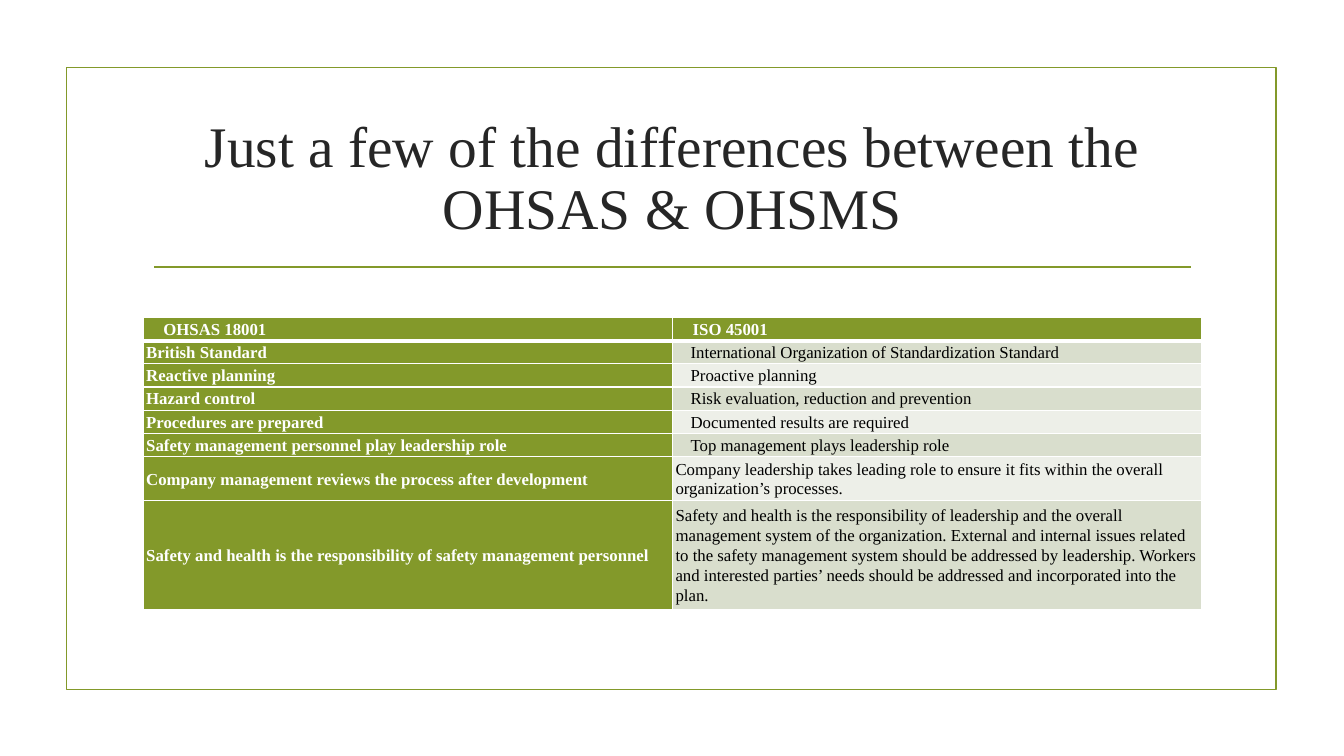
from lxml import etree
from pptx import Presentation
from pptx import util as u
from pptx.dml.color import RGBColor
from pptx.enum import shapes, text
from pptx.oxml.ns import qn

GREEN, WHITE, BLACK, INK = "83992A", "FFFFFF", "000000", "262626"
BANDS = "D9DECD", "EDEFE8"
HEADER_INDENT, ANSWER_INDENT = 17, 15
ROW_HEIGHTS = [23] * 6 + [44, 108]
COMPARISON = [
    ("OHSAS 18001", "ISO 45001"),
    ("British Standard", "International Organization of Standardization Standard"),
    ("Reactive planning", "Proactive planning"),
    ("Hazard control", "Risk evaluation, reduction and prevention"),
    ("Procedures are prepared", "Documented results are required"),
    ("Safety management personnel play leadership role",
     "Top management plays leadership role"),
    ("Company management reviews the process after development",
     "Company leadership takes leading role to ensure it fits within the overall "
     "organization’s processes."),
    ("Safety and health is the responsibility of safety management personnel",
     "Safety and health is the responsibility of leadership and the overall "
     "management system of the organization. External and internal issues related "
     "to the safety management system should be addressed by leadership. Workers "
     "and interested parties’ needs should be addressed and incorporated into the plan."),
]


def px(*lengths):
    """Turn px, 100 to the inch, into EMU."""
    return [u.Emu(length * 9144) for length in lengths]


def rgb(color):
    return RGBColor.from_string(color)


def write(frame, content, size=12, color=BLACK, bold=False, align=None,
          spacing=1.07, indent=0):
    paragraph = frame.paragraphs[0]
    paragraph.alignment = align
    paragraph.line_spacing = spacing
    if indent:
        paragraph._p.get_or_add_pPr().set("indent", str(px(indent)[0]))
    run = paragraph.add_run()
    run.text = content
    run.font.name = "Times New Roman"
    run.font.size = u.Pt(size)
    run.font.bold = bold
    run.font.color.rgb = rgb(color)


def border(cell, **widths):
    """Draw white edges; keys are the sides L, R, T, B and values points."""
    for side, width in widths.items():
        edge = etree.SubElement(cell._tc.get_or_add_tcPr(), qn(f"a:ln{side}"),
                                w=str(u.Pt(width)))
        fill = etree.SubElement(edge, qn("a:solidFill"))
        etree.SubElement(fill, qn("a:srgbClr"), val=WHITE)


class SlideBuilder:
    def __init__(self, deck, accent=GREEN):
        self.slide = deck.slides.add_slide(deck.slide_layouts[5])
        self.accent = accent

    def outline(self, shape):
        shape.line.color.rgb = rgb(self.accent)
        shape.line.width = u.Pt(1.25)

    def frame(self, *box):
        frame = self.slide.shapes.add_shape(shapes.MSO_SHAPE.RECTANGLE, *px(*box))
        frame.shadow.inherit = False
        frame.fill.background()
        self.outline(frame)

    def rule(self, *ends):
        rule = self.slide.shapes.add_connector(shapes.MSO_CONNECTOR.STRAIGHT, *px(*ends))
        etree.SubElement(rule._element.spPr, qn("a:effectLst"))
        self.outline(rule)

    def title(self, content, *box):
        title = self.slide.shapes.title
        title.left, title.top, title.width, title.height = px(*box)
        title.text_frame.word_wrap = True
        title.text_frame.auto_size = text.MSO_AUTO_SIZE.NONE
        title.text_frame.vertical_anchor = text.MSO_ANCHOR.MIDDLE
        write(title.text_frame, content, size=41, color=INK,
              align=text.PP_ALIGN.CENTER, spacing=0.9)

    def cell(self, cell, content, fill, **style):
        cell.margin_left, cell.margin_right, cell.margin_top, cell.margin_bottom = px(3, 3, 0, 0)
        cell.vertical_anchor = text.MSO_ANCHOR.MIDDLE
        cell.fill.solid()
        cell.fill.fore_color.rgb = rgb(fill)
        write(cell.text_frame, content, **style)

    def comparison(self, rows, heights, *box):
        table = self.slide.shapes.add_table(len(rows), 2, *px(*box)).table
        for r, (row, height) in enumerate(zip(rows, heights)):
            table.rows[r].height = px(height)[0]
            for c, content in enumerate(row):
                header, answer = r == 0, c == 1
                cell = table.cell(r, c)
                border(cell, L=1, R=1, T=3 if r == 1 else 1, B=3 if header else 1)
                if header or not answer:
                    self.cell(cell, content, self.accent, color=WHITE, bold=True,
                              indent=HEADER_INDENT if header else 0)
                else:
                    one_line = height == heights[0]
                    self.cell(cell, content, BANDS[(r - 1) % 2],
                              indent=ANSWER_INDENT if one_line else 0)


def main():
    deck = Presentation()
    deck.slide_width, deck.slide_height = px(1333, 750)
    builder = SlideBuilder(deck)
    builder.frame(66, 67, 1200, 617)
    builder.rule(153, 265, 1181, 265)
    builder.title("Just a few of the differences between the OHSAS & OHSMS",
                  142, 107, 1050, 143)
    builder.comparison(COMPARISON, ROW_HEIGHTS, 142, 315, 1050, sum(ROW_HEIGHTS))
    deck.save("out.pptx")


if __name__ == "__main__":
    main()
